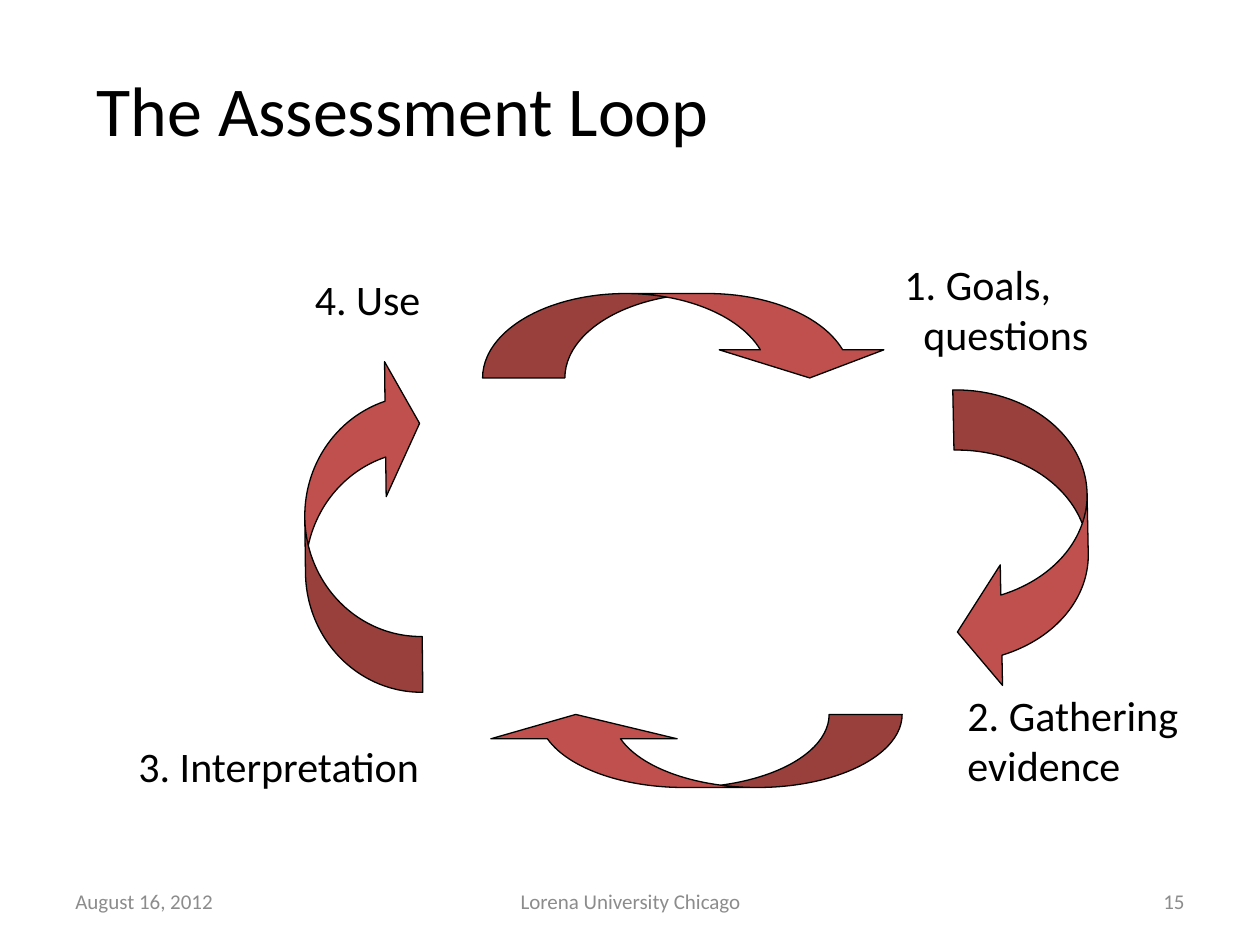
from pptx import Presentation
from pptx.dml.color import RGBColor
from pptx.enum.shapes import MSO_SHAPE as Shape
from pptx.enum.text import MSO_ANCHOR as Anchor, PP_ALIGN as Align
from pptx.util import Inches, Pt


def color(hex_code):
    return RGBColor.from_string(hex_code)


def add_text(box, lines, size, hex_code, align=Align.LEFT, anchor=Anchor.TOP, indent=0):
    frame = slide.shapes.add_textbox(*[Inches(v) for v in box]).text_frame
    frame.word_wrap = True
    frame.vertical_anchor = anchor
    for number, line in enumerate(lines):
        paragraph = frame.add_paragraph() if number else frame.paragraphs[0]
        paragraph.alignment = align
        if number and indent:
            paragraph._p.get_or_add_pPr().set("marL", str(Inches(indent)))
        run = paragraph.add_run()
        run.text = line
        run.font.name = "Calibri"
        run.font.size = Pt(size)
        run.font.color.rgb = color(hex_code)


presentation = Presentation()
presentation.slide_width = Inches(10)
presentation.slide_height = Inches(7.5)
slide = presentation.slides.add_slide(presentation.slide_layouts[6])

add_text((0.67, 0.48, 8.16, 0.77), ["The Assessment Loop"], 40, "000000")

loop_arrows = [
    (Shape.CURVED_DOWN_ARROW, (3.83, 2.33, 3.25, 0.67), 0, (0.975, 1.95, 0.333)),
    (Shape.CURVED_DOWN_ARROW, (6.91, 3.76, 2.4, 1.05), 88.9, (0.455, 0.911, 0.333)),
    (Shape.CURVED_DOWN_ARROW, (3.83, 5.67, 3.33, 0.58), 180, (1.492, 2.549, 0.333)),
    (Shape.CURVED_LEFT_ARROW, (2.42, 2.83, 0.92, 2.67), 179.3, (0.481, 1.164, 0.296)),
]
for preset, box, rotation, adjustments in loop_arrows:
    arrow = slide.shapes.add_shape(preset, *[Inches(v) for v in box])
    arrow.rotation = rotation
    for index, value in enumerate(adjustments):
        arrow.adjustments[index] = value
    arrow.shadow.inherit = False
    arrow.fill.solid()
    arrow.fill.fore_color.rgb = color("C0504D")
    arrow.line.color.rgb = color("000000")
    arrow.line.width = Pt(0.75)

steps = [
    ((7.08, 2, 3.22, 0.9), ["1. Goals,", "questions"]),
    ((7.58, 5.42, 2.42, 0.9), ["2. Gathering evidence"]),
    ((1, 5.83, 3.99, 0.5), ["3. Interpretation"]),
    ((2.4, 2.12, 1.27, 0.5), ["4. Use"]),
]
for box, lines in steps:
    add_text(box, lines, 24, "000000", indent=0.15)

footers = [
    (0.5, 2.33, "August 16, 2012", Align.LEFT),
    (3.42, 3.17, "Lorena University Chicago", Align.CENTER),
    (7.17, 2.33, "15", Align.RIGHT),
]
for left, width, label, align in footers:
    add_text((left, 6.95, width, 0.4), [label], 12, "8C8C8C", align, Anchor.MIDDLE)

presentation.save("out.pptx")
